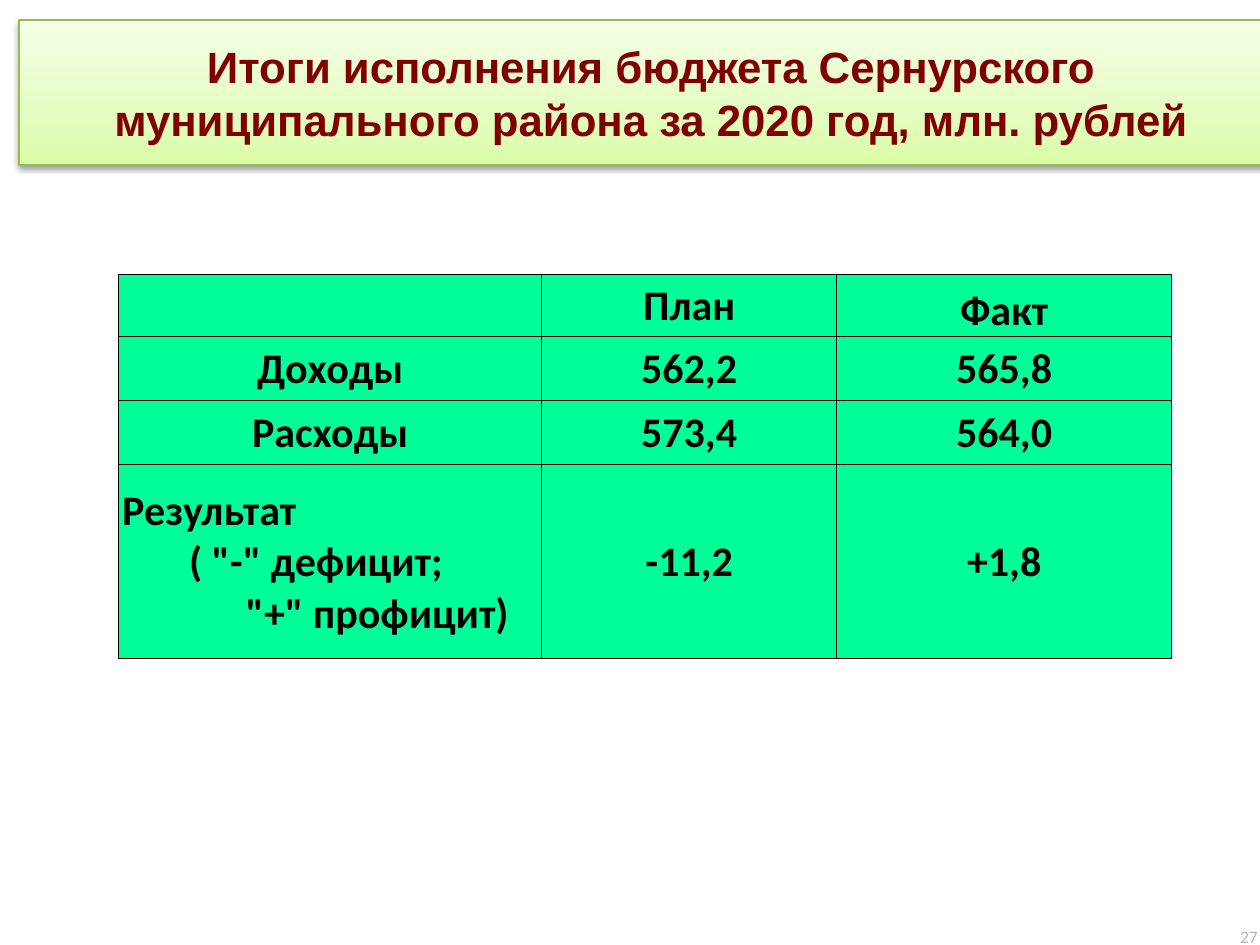
"""Build the slide with the budget results of the Sernur district for 2020."""
import pptx
import pptx.dml.color
import pptx.enum.text
import pptx.oxml
import pptx.oxml.ns
import pptx.util

Inches = pptx.util.Inches
Pt = pptx.util.Pt
RGBColor = pptx.dml.color.RGBColor
PP_ALIGN = pptx.enum.text.PP_ALIGN
MSO_ANCHOR = pptx.enum.text.MSO_ANCHOR

MAROON = RGBColor(0x80, 0x00, 0x00)
OLIVE = RGBColor(0x98, 0xB9, 0x55)
MINT = RGBColor(0x00, 0xFF, 0x99)
BLACK = RGBColor(0x00, 0x00, 0x00)
GRAY = RGBColor(0xB3, 0xB3, 0xB3)
BANNER_STOPS = [
    (0, RGBColor(0xDA, 0xFD, 0xA7)),
    (35, RGBColor(0xE4, 0xFC, 0xC2)),
    (100, RGBColor(0xF5, 0xFF, 0xE7)),
]
NS = pptx.oxml.ns.nsdecls("a")

COLUMNS = [3.36, 2.34, 2.66]
ROWS = [0.49, 0.51, 0.51, 1.54]
CELLS = [
    ["", "План", "Факт"],
    ["Доходы", "562,2", "565,8"],
    ["Расходы", "573,4", "564,0"],
    ['Результат\n( "-" дефицит;\n"+" профицит)', "-11,2", "+1,8"],
]
RESULT_INDENTS = [0.02, 0.55, 1]


def format_text(p, font, size, color, bold, align):
    p.alignment = align
    for r in p.runs:
        r.font.name = font
        r.font.size = Pt(size)
        r.font.color.rgb = color
        r.font.bold = bold


prs = pptx.Presentation()
prs.slide_width = Inches(10)
prs.slide_height = Inches(7.5)
s = prs.slides.add_slide(prs.slide_layouts[5])

title = s.shapes.title
title.left, title.top = Inches(0.15), Inches(0.16)
title.width, title.height = Inches(10.03), Inches(1.15)
title.fill.gradient()
title.fill.gradient_angle = 90
stops = title._element.spPr.find(".//" + pptx.oxml.ns.qn("a:gsLst"))
for stop in list(stops):
    stops.remove(stop)
for position, color in BANNER_STOPS:
    stops.append(pptx.oxml.parse_xml(
        f'<a:gs {NS} pos="{position * 1000}"><a:srgbClr val="{color}"/></a:gs>'))
title.line.color.rgb = OLIVE
title.line.width = Pt(0.75)
title.shadow.inherit = False
effects = title._element.spPr.find(pptx.oxml.ns.qn("a:effectLst"))
effects.append(pptx.oxml.parse_xml(
    f'<a:outerShdw {NS} blurRad="{Pt(3.1)}" dist="{Pt(1.6)}" dir="5400000" rotWithShape="0">'
    '<a:srgbClr val="000000"><a:alpha val="38000"/></a:srgbClr></a:outerShdw>'))
tf = title.text_frame
tf.text = "Итоги исполнения бюджета Сернурского муниципального района за 2020 год, млн. рублей"
tf.word_wrap = True
tf.vertical_anchor = MSO_ANCHOR.MIDDLE
format_text(tf.paragraphs[0], "Arial", 25, MAROON, True, PP_ALIGN.CENTER)

number = s.shapes.add_textbox(Inches(9.73), Inches(7.28), Inches(0.35), Inches(0.31))
tf = number.text_frame
tf.text = "27"
tf.word_wrap = True
tf.vertical_anchor = MSO_ANCHOR.MIDDLE
format_text(tf.paragraphs[0], "Calibri", 10, GRAY, False, PP_ALIGN.RIGHT)

table = s.shapes.add_table(len(ROWS), len(COLUMNS), Inches(0.94), Inches(2.18),
                           Inches(sum(COLUMNS)), Inches(sum(ROWS))).table
for column, width in zip(table.columns, COLUMNS):
    column.width = Inches(width)
for row, height, texts in zip(table.rows, ROWS, CELLS):
    row.height = Inches(height)
    for cell, text in zip(row.cells, texts):
        cell.margin_left = cell.margin_right = cell.margin_top = Inches(0.01)
        cell.margin_bottom = 0
        cell.vertical_anchor = MSO_ANCHOR.MIDDLE
        for side in "LRTB":
            cell._tc.get_or_add_tcPr().append(pptx.oxml.parse_xml(
                f'<a:ln{side} {NS} w="{Pt(0.5)}"><a:solidFill>'
                f'<a:srgbClr val="{BLACK}"/></a:solidFill></a:ln{side}>'))
        cell.fill.solid()
        cell.fill.fore_color.rgb = MINT
        cell.text_frame.text = text
        for p in cell.text_frame.paragraphs:
            format_text(p, "Calibri", 24, BLACK, True, PP_ALIGN.CENTER)

table.cell(0, 2).vertical_anchor = MSO_ANCHOR.BOTTOM
for p, indent in zip(table.cell(3, 0).text_frame.paragraphs, RESULT_INDENTS):
    p.alignment = PP_ALIGN.LEFT
    p._p.get_or_add_pPr().set("marL", str(Inches(indent)))

prs.save("out.pptx")
